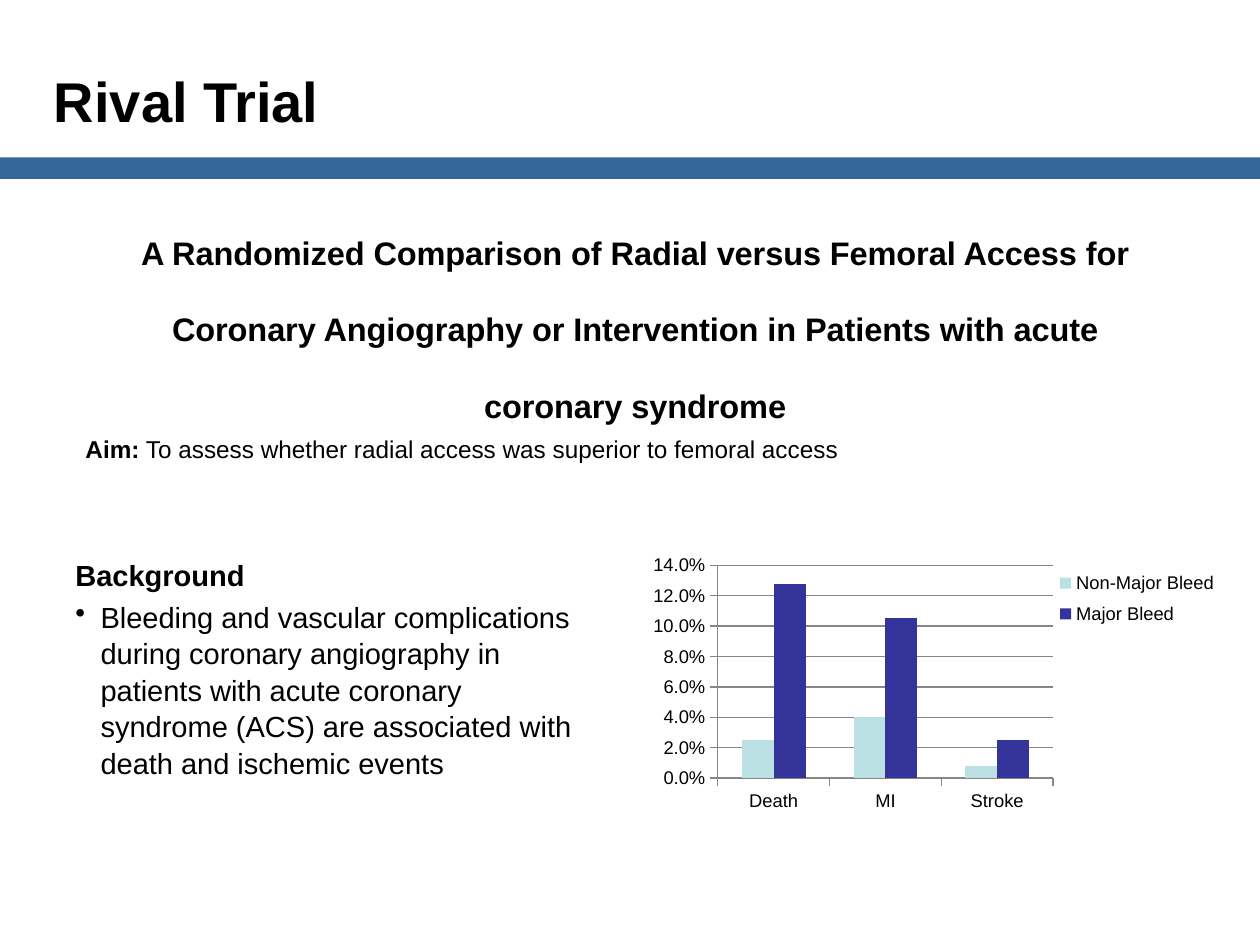
"""Build the Rival Trial slide: title, study heading, aim, background and bleeding chart."""
import pptx
import pptx.chart.data
import pptx.dml.color
import pptx.enum.chart
import pptx.enum.shapes
import pptx.enum.text
import pptx.oxml
import pptx.oxml.ns
import pptx.util
from pptx.util import Inches, Pt

FONT = "Arial"
COLORS = {"text": "000000", "band": "336699", "grid": "868686"}

TITLE = "Rival Trial"
STUDY = ("A Randomized Comparison of Radial versus Femoral Access for Coronary "
         "Angiography or Intervention in Patients with acute coronary syndrome")
AIM = [("Aim:", True), (" To assess whether radial access was superior to femoral access", False)]
BACKGROUND = "Background"
BACKGROUND_POINT = ("Bleeding and vascular complications during coronary angiography in patients "
                    "with acute coronary syndrome (ACS) are associated with death and ischemic events")
OUTCOMES = ["Death", "MI", "Stroke"]
BLEED_GROUPS = [
    ("Non-Major Bleed", [0.025, 0.04, 0.008], "BBE0E3"),
    ("Major Bleed", [0.128, 0.105, 0.025], "333399"),
]
PLOT_AREA = {"x": 0.228, "y": 0.101, "w": 0.507, "h": 0.538}
LEGEND_AREA = {"x": 0.737, "y": 0.095, "w": 0.25, "h": 0.18}


def rgb(value):
    return pptx.dml.color.RGBColor.from_string(value)


def add_text(frame, runs, size, align="LEFT", baseline=0, before=0, line=None, bullet=None):
    filled = bool(frame.paragraphs[0].runs)
    paragraph = frame.add_paragraph() if filled else frame.paragraphs[0]
    if bullet:
        props = paragraph._p.get_or_add_pPr()
        props.set("marL", str(Inches(0.2)))
        props.set("indent", str(-Inches(0.2)))
        mark = pptx.oxml.parse_xml(f'<a:buChar {pptx.oxml.ns.nsdecls("a")} char="{bullet}"/>')
        props.append(mark)
    paragraph.alignment = getattr(pptx.enum.text.PP_ALIGN, align)
    paragraph.space_before = Pt(before)
    if line:
        paragraph.line_spacing = line
    for words, bold in runs:
        run = paragraph.add_run()
        run.text = words
        run.font.name, run.font.size, run.font.bold = FONT, Pt(size), bold
        run.font.color.rgb = rgb(COLORS["text"])
        if baseline:
            run._r.get_or_add_rPr().set("baseline", str(baseline * 1000))


def add_frame(slide, box, wrap=True, anchor="TOP"):
    frame = slide.shapes.add_textbox(*map(Inches, box)).text_frame
    frame.word_wrap = wrap
    frame.vertical_anchor = getattr(pptx.enum.text.MSO_ANCHOR, anchor)
    return frame


def place(element, index, area, inner=False):
    for old in element.findall(pptx.oxml.ns.qn("c:layout")):
        element.remove(old)
    target = '<c:layoutTarget val="inner"/>' if inner else ""
    modes = '<c:xMode val="edge"/><c:yMode val="edge"/>'
    sizes = "".join(f'<c:{side} val="{share}"/>' for side, share in area.items())
    element.insert(index, pptx.oxml.parse_xml(
        f'<c:layout {pptx.oxml.ns.nsdecls("c")}><c:manualLayout>'
        f"{target}{modes}{sizes}</c:manualLayout></c:layout>"))


def style_font(font, size):
    font.name, font.size, font.bold = FONT, Pt(size), False
    font.color.rgb = rgb(COLORS["text"])


def add_bleed_chart(slide, box):
    outcomes = pptx.chart.data.CategoryChartData(number_format="0.0%")
    outcomes.categories = OUTCOMES
    for name, rates, _ in BLEED_GROUPS:
        outcomes.add_series(name, rates)
    kind = pptx.enum.chart.XL_CHART_TYPE.COLUMN_CLUSTERED
    chart = slide.shapes.add_chart(kind, *map(Inches, box), outcomes).chart
    chart.has_title = False
    style_font(chart.font, 18)
    plot = chart.plots[0]
    plot.gap_width, plot.overlap, plot.vary_by_categories = 150, 0, False
    for series, (_, _, color) in zip(plot.series, BLEED_GROUPS):
        series.format.fill.solid()
        series.format.fill.fore_color.rgb = rgb(color)
    for axis in (chart.category_axis, chart.value_axis):
        style_font(axis.tick_labels.font, 10.5)
        axis.major_tick_mark = pptx.enum.chart.XL_TICK_MARK.OUTSIDE
        axis.format.line.color.rgb = rgb(COLORS["grid"])
    rates_axis = chart.value_axis
    rates_axis.minimum_scale, rates_axis.maximum_scale, rates_axis.major_unit = 0, 0.14, 0.02
    rates_axis.tick_labels.number_format = "0.0%"
    rates_axis.tick_labels.number_format_is_linked = False
    rates_axis.has_major_gridlines = True
    rates_axis.major_gridlines.format.line.color.rgb = rgb(COLORS["grid"])
    chart.has_legend = True
    chart.legend.position = pptx.enum.chart.XL_LEGEND_POSITION.RIGHT
    chart.legend.include_in_layout = False
    style_font(chart.legend.font, 10.5)
    place(chart.legend._element, 1, LEGEND_AREA)
    place(chart._chartSpace.chart.plotArea, 0, PLOT_AREA, inner=True)


def main():
    deck = pptx.Presentation()
    deck.slide_width, deck.slide_height = Inches(10), Inches(7.5)
    slide = deck.slides.add_slide(deck.slide_layouts[6])

    band = slide.shapes.add_shape(pptx.enum.shapes.MSO_SHAPE.RECTANGLE,
                                  *map(Inches, (0, 1.25, 10, 0.17)))
    band.shadow.inherit = False
    band.fill.solid()
    band.fill.fore_color.rgb = rgb(COLORS["band"])
    band.line.fill.background()

    add_text(add_frame(slide, (0.33, 0.17, 2.92, 1.25), anchor="MIDDLE"), [(TITLE, True)], 32)
    add_text(add_frame(slide, (0.75, 1.5, 8.58, 1.18)), [(STUDY, True)], 32,
             align="CENTER", baseline=-25)
    background = add_frame(slide, (0.5, 4.36, 4.17, 2.56))
    add_text(background, [(BACKGROUND, True)], 16.6, line=1.05)
    add_text(background, [(BACKGROUND_POINT, False)], 16.6, before=3, line=1.05, bullet="•")
    add_bleed_chart(slide, (4.5, 4.17, 5.25, 3.14))
    add_text(add_frame(slide, (0.58, 3.17, 7.15, 0.37), wrap=False), AIM, 24, baseline=-25)

    deck.save("out.pptx")


if __name__ == "__main__":
    main()
